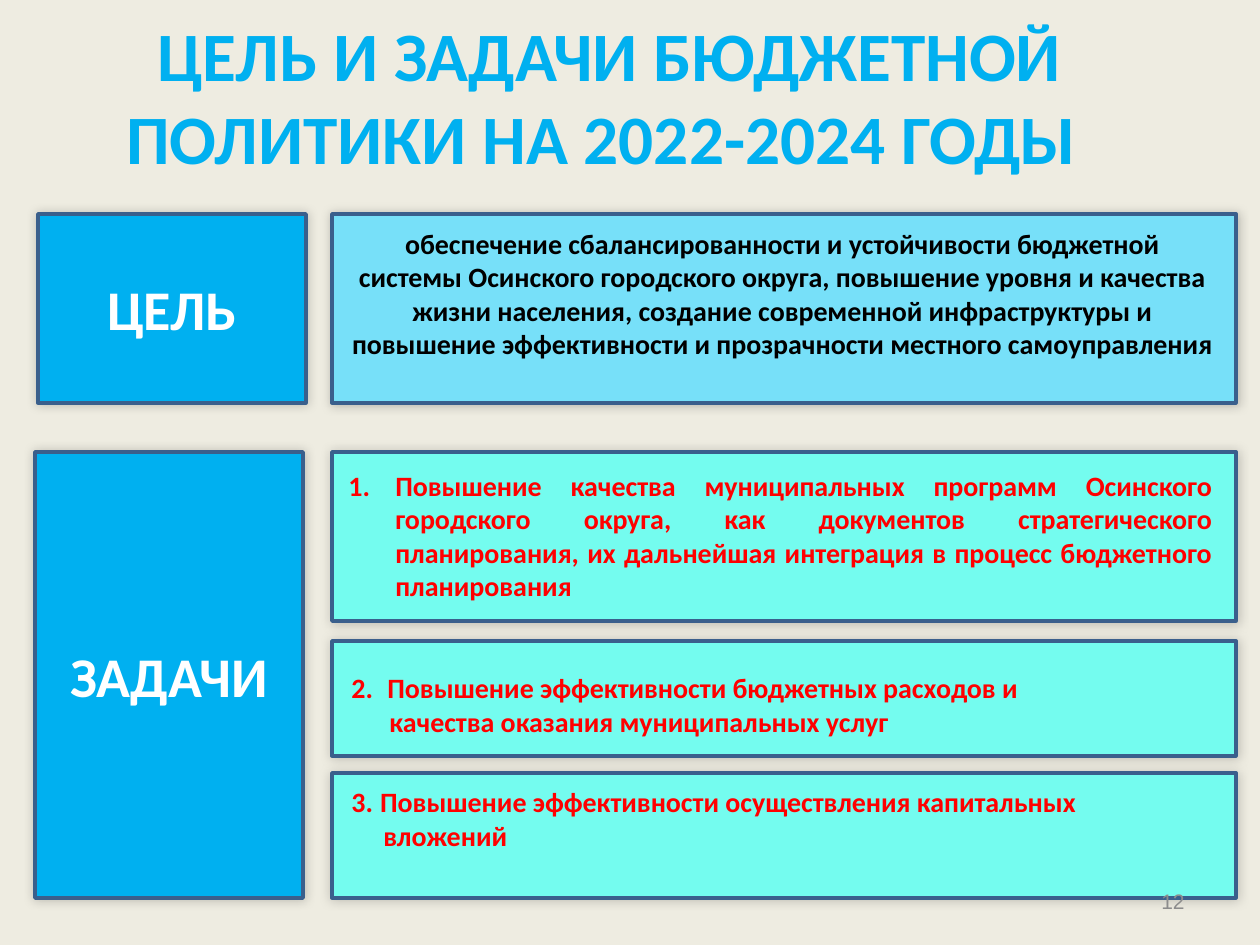
from lxml import etree
from pptx import Presentation
from pptx import util as u
from pptx.dml.color import RGBColor
from pptx.enum import shapes, text
from pptx.oxml.ns import qn

PX_PER_INCH = 126
COLORS = {
    "background": "EEECE1", "accent": "00B0F0", "goal": "77E0F9",
    "task": "74FCEF", "border": "3A5F8C", "white": "FFFFFF",
    "black": "000000", "red": "FF0000", "gray": "8C8C8C",
}
ALIGN = text.PP_ALIGN
GOAL = (
    "обеспечение сбалансированности и устойчивости бюджетной системы Осинского "
    "городского округа, повышение уровня и качества жизни населения, создание "
    "современной инфраструктуры и повышение эффективности и прозрачности "
    "местного самоуправления"
)
FIRST_TASK = (
    "Повышение качества муниципальных программ Осинского городского округа, "
    "как документов стратегического планирования, их дальнейшая интеграция "
    "в процесс бюджетного планирования"
)


def px(value):
    return u.Inches(value / PX_PER_INCH)


def rgb(name):
    return RGBColor.from_string(COLORS[name])


def format_runs(paragraph, size, color, bold=True, font="Calibri"):
    for run in paragraph.runs:
        run.font.size = u.Pt(size)
        run.font.name = font
        run.font.bold = bold
        run.font.color.rgb = rgb(color)


def add_soft_shadow(shape):
    effects = etree.SubElement(shape._element.spPr, qn("a:effectLst"))
    shadow = etree.SubElement(effects, qn("a:outerShdw"), blurRad=str(u.Pt(6)),
                              dist="0", dir=str(315 * 60000), rotWithShape="0")
    color = etree.SubElement(shadow, qn("a:srgbClr"), val=COLORS["black"])
    etree.SubElement(color, qn("a:alpha"), val="20000")


def add_panel(slide, box, fill, label=None):
    panel = slide.shapes.add_shape(shapes.MSO_SHAPE.RECTANGLE, *map(px, box))
    panel.fill.solid()
    panel.fill.fore_color.rgb = rgb(fill)
    panel.line.color.rgb = rgb("border")
    panel.line.width = u.Pt(2)
    add_soft_shadow(panel)
    if label:
        panel.text_frame.text = label
        panel.text_frame.vertical_anchor = text.MSO_ANCHOR.MIDDLE
        paragraph = panel.text_frame.paragraphs[0]
        paragraph.alignment = ALIGN.CENTER
        format_runs(paragraph, 32, "white")


def add_text(slide, box):
    frame = slide.shapes.add_textbox(*map(px, box)).text_frame
    frame.word_wrap = True
    return frame


def set_indent(paragraph, margin, first_line=0):
    properties = paragraph._p.get_or_add_pPr()
    properties.set("marL", str(px(margin)))
    properties.set("indent", str(px(first_line)))
    return properties


def add_title(slide, box):
    title = slide.shapes.title
    title.left, title.top, title.width, title.height = map(px, box)
    frame = title.text_frame
    frame.text = "ЦЕЛЬ И ЗАДАЧИ БЮДЖЕТНОЙ ПОЛИТИКИ НА 2022-2024 ГОДЫ "
    frame.auto_size = text.MSO_AUTO_SIZE.NONE
    frame.vertical_anchor = text.MSO_ANCHOR.MIDDLE
    frame.paragraphs[0].alignment = ALIGN.CENTER
    format_runs(frame.paragraphs[0], 39.6, "accent")


def add_goal(slide, box):
    left, top, width, height = box
    add_panel(slide, box, "goal")
    frame = add_text(slide, (left + 6, top + 6, width - 15, 149))
    frame.text = GOAL
    frame.paragraphs[0].alignment = ALIGN.CENTER
    format_runs(frame.paragraphs[0], 16, "black")


def add_numbered_task(slide, box):
    left, top, width, height = box
    add_panel(slide, box, "task")
    frame = add_text(slide, (left + 4, top + 10, width - 15, 149))
    frame.text = FIRST_TASK
    paragraph = frame.paragraphs[0]
    paragraph.alignment = ALIGN.JUSTIFY
    properties = set_indent(paragraph, 47, -47)
    etree.SubElement(properties, qn("a:buFont"), typeface="+mj-lt")
    etree.SubElement(properties, qn("a:buAutoNum"), type="arabicPeriod")
    format_runs(paragraph, 16, "red")


def add_two_line_task(slide, box, text_top, marker, gap, lines, margins):
    """Task whose number is typed and whose second line is indented."""
    left, top, width, height = box
    add_panel(slide, box, "task")
    frame = add_text(slide, (left + 7, top + text_top, width - 15,
                             height - text_top))
    first, second = frame.paragraphs[0], frame.add_paragraph()
    for part in (marker, gap, lines[0]):
        first.add_run().text = part
    second.text = lines[1]
    set_indent(first, margins[0], -margins[0])
    set_indent(second, margins[1])
    for paragraph in (first, second):
        paragraph.alignment = ALIGN.LEFT
        format_runs(paragraph, 16, "red")
    first.runs[1].font.size = u.Pt(18)


def add_page_number(slide, box):
    frame = add_text(slide, box)
    frame.text = "12"
    frame.vertical_anchor = text.MSO_ANCHOR.MIDDLE
    frame.paragraphs[0].alignment = ALIGN.RIGHT
    format_runs(frame.paragraphs[0], 12, "gray", bold=False, font="Arial")


def main():
    presentation = Presentation()
    presentation.slide_width, presentation.slide_height = px(1260), px(945)
    slide = presentation.slides.add_slide(presentation.slide_layouts[5])
    slide.background.fill.solid()
    slide.background.fill.fore_color.rgb = rgb("background")

    left, width = 332, 904
    add_title(slide, (95, 16, 1029, 158))
    add_panel(slide, (38, 214, 268, 189), "accent", "ЦЕЛЬ")
    add_goal(slide, (left, 214, width, 189))
    add_panel(slide, (35, 452, 268, 446), "accent", "ЗАДАЧИ")
    add_numbered_task(slide, (left, 452, width, 169))
    add_two_line_task(
        slide, (left, 641, width, 115), 20, "2.", "\t",
        ("Повышение эффективности бюджетных расходов и",
         "качества оказания муниципальных услуг"), (36, 38))
    add_two_line_task(
        slide, (left, 773, width, 125), 2, "3.", " ",
        ("Повышение эффективности осуществления капитальных",
         "вложений"), (28, 32))
    add_page_number(slide, (903, 876, 294, 50))
    presentation.save("out.pptx")


if __name__ == "__main__":
    main()
